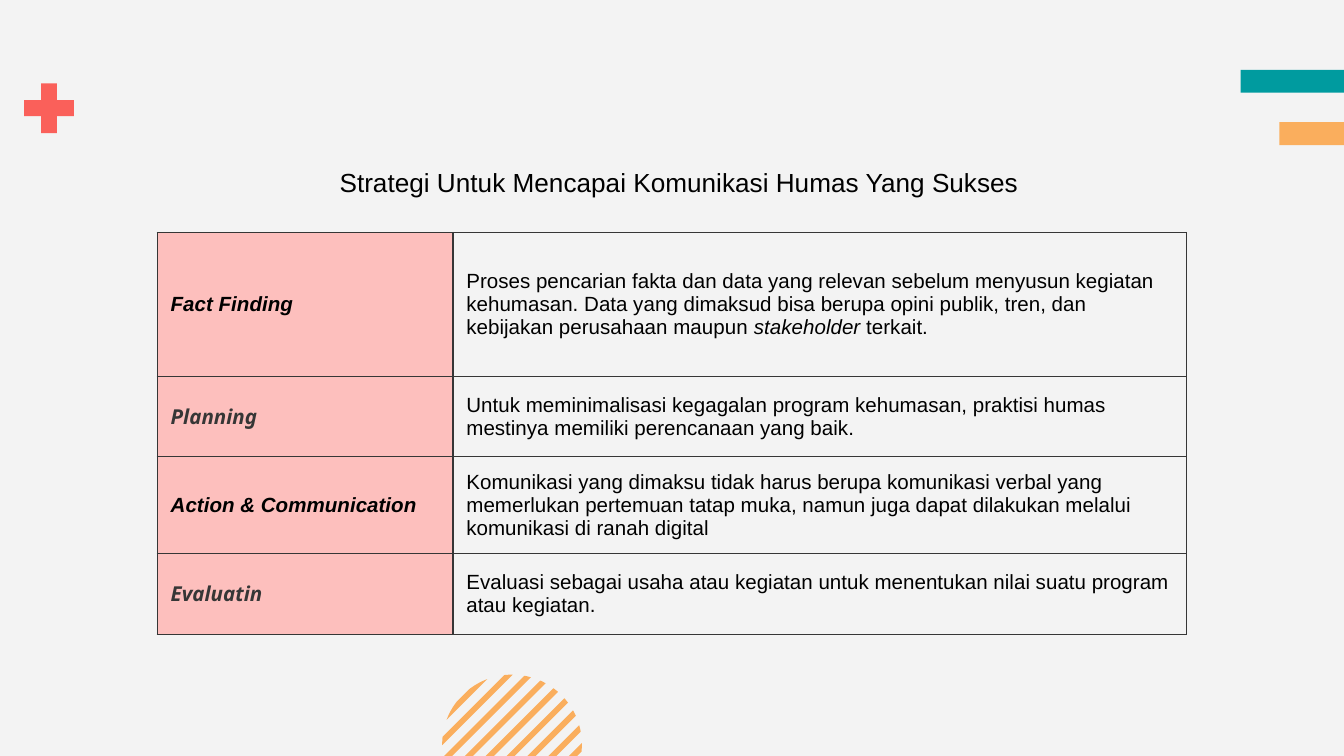
"""Build a slide with a four-step public relations strategy table."""
import math

from lxml import etree
from pptx import Presentation
from pptx import util as u
from pptx.dml.color import RGBColor
from pptx.enum import shapes, text
from pptx.oxml import ns

BACKGROUND = RGBColor(0xF3, 0xF3, 0xF3)
TEAL = RGBColor(0x00, 0x9B, 0x9F)
ORANGE = RGBColor(0xFA, 0xAE, 0x5D)
CORAL = RGBColor(0xFA, 0x60, 0x5A)
PINK = RGBColor(0xFD, 0xBF, 0xBD)
DARK = RGBColor(0x36, 0x36, 0x36)
BLACK = RGBColor(0x00, 0x00, 0x00)

COLUMN_WIDTHS = (2.2, 5.46)
ARIAL_LABEL = {"font": "Arial", "color": BLACK}
NOTO_LABEL = {"font": "Noto Sans", "color": DARK}
STRATEGY = [
    (1.07, "Fact Finding", ARIAL_LABEL, [
        ("Proses pencarian fakta dan data yang relevan sebelum menyusun kegiatan "
         "kehumasan. Data yang dimaksud bisa berupa opini publik, tren, dan "
         "kebijakan perusahaan maupun ", False),
        ("stakeholder ", True),
        ("terkait.", False)]),
    (0.6, "Planning", NOTO_LABEL, [
        ("Untuk meminimalisasi kegagalan program kehumasan, praktisi humas "
         "mestinya memiliki perencanaan yang baik.", False)]),
    (0.72, "Action & Communication", ARIAL_LABEL, [
        ("Komunikasi yang dimaksu tidak harus berupa komunikasi verbal yang "
         "memerlukan pertemuan tatap muka, namun juga dapat dilakukan melalui "
         "komunikasi di ranah digital", False)]),
    (0.6, "Evaluatin", NOTO_LABEL, [
        ("Evaluasi sebagai usaha atau kegiatan untuk menentukan nilai suatu "
         "program atau kegiatan.", False)]),
]


def add_run(paragraph, content, size=11, font="Arial", color=BLACK, bold=False, italic=False):
    run = paragraph.add_run()
    run.text = content
    run.font.size = u.Pt(size)
    run.font.name = font
    run.font.color.rgb = color
    run.font.bold = bold
    run.font.italic = italic


class SlideBuilder:
    def __init__(self, slide, border_color=DARK, border_width=0.75):
        self.slide = slide
        self.border_color = border_color
        self.border_width = border_width
        slide.background.fill.solid()
        slide.background.fill.fore_color.rgb = BACKGROUND

    def paint(self, shape, color):
        shape.shadow.inherit = False
        shape.fill.solid()
        shape.fill.fore_color.rgb = color
        shape.line.fill.background()

    def preset(self, kind, left, top, width, height, color):
        shape = self.slide.shapes.add_shape(
            kind, *map(u.Inches, (left, top, width, height)))
        self.paint(shape, color)
        return shape

    def striped_circle(self, center_x, center_y, radius, first, last, count, thickness, color):
        steps = 12
        for index in range(count):
            middle = first + (last - first) * index / (count - 1)
            near, far = (
                math.acos(max(-1, (middle + side * thickness / 2) / math.sqrt(2) / radius))
                for side in (1, -1))
            arc = [near + (far - near) * step / steps for step in range(steps + 1)]
            angles = arc + [-angle for angle in reversed(arc)]
            points = [(u.Inches(center_x + radius * math.cos(math.pi / 4 + angle)),
                       u.Inches(center_y + radius * math.sin(math.pi / 4 + angle)))
                      for angle in angles]
            builder = self.slide.shapes.build_freeform(*points[0])
            builder.add_line_segments(points[1:], close=True)
            self.paint(builder.convert_to_shape(), color)

    def title(self, content, left, top, width, height):
        shape = self.slide.shapes.add_textbox(
            *map(u.Inches, (left, top, width, height)))
        frame = shape.text_frame
        frame.word_wrap = True
        frame.margin_left = frame.margin_top = frame.margin_bottom = u.Inches(0.1)
        frame.margin_right = 0
        paragraph = frame.paragraphs[0]
        paragraph.alignment = text.PP_ALIGN.CENTER
        add_run(paragraph, content, size=14)

    def format_cell(self, cell, color=None):
        cell.vertical_anchor = text.MSO_ANCHOR.MIDDLE
        cell.margin_left = cell.margin_right = u.Inches(0.1)
        cell.margin_top = cell.margin_bottom = 0
        properties = cell._tc.get_or_add_tcPr()
        for side in ("lnL", "lnR", "lnT", "lnB"):
            line = etree.SubElement(properties, ns.qn(f"a:{side}"),
                                    w=str(u.Pt(self.border_width)))
            fill = etree.SubElement(line, ns.qn("a:solidFill"))
            etree.SubElement(fill, ns.qn("a:srgbClr"), val=str(self.border_color))
        if color is None:
            cell.fill.background()
        else:
            cell.fill.solid()
            cell.fill.fore_color.rgb = color

    def strategy_table(self, rows, left, top):
        height = sum(row[0] for row in rows)
        table = self.slide.shapes.add_table(
            len(rows), len(COLUMN_WIDTHS),
            *map(u.Inches, (left, top, sum(COLUMN_WIDTHS), height))).table
        table.first_row = table.horz_banding = False
        for column, width in zip(table.columns, COLUMN_WIDTHS):
            column.width = u.Inches(width)
        for index, (row_height, label, label_style, description) in enumerate(rows):
            table.rows[index].height = u.Inches(row_height)
            label_cell, description_cell = table.rows[index].cells
            self.format_cell(label_cell, PINK)
            add_run(label_cell.text_frame.paragraphs[0], label,
                    bold=True, italic=True, **label_style)
            self.format_cell(description_cell)
            paragraph = description_cell.text_frame.paragraphs[0]
            paragraph.space_after = u.Pt(16)
            for content, italic in description:
                add_run(paragraph, content, italic=italic)


def main():
    presentation = Presentation()
    presentation.slide_width = u.Inches(10)
    presentation.slide_height = u.Inches(10 * 9 / 16)
    slide = presentation.slides.add_slide(presentation.slide_layouts[6])
    builder = SlideBuilder(slide)

    kinds = shapes.MSO_SHAPE
    builder.preset(kinds.RECTANGLE, 9.23, 0.52, 0.79, 0.17, TEAL)
    builder.preset(kinds.RECTANGLE, 9.52, 0.91, 0.5, 0.17, ORANGE)
    plus = builder.preset(kinds.CROSS, 0.18, 0.62, 0.37, 0.37, CORAL)
    plus.adjustments[0] = 0.34
    builder.striped_circle(3.81, 5.54, 0.52, first=0.54, last=-0.7, count=9,
                           thickness=0.06, color=ORANGE)
    builder.strategy_table(STRATEGY, 1.17, 1.73)
    builder.title("Strategi Untuk Mencapai Komunikasi Humas Yang Sukses",
                  0.79, 1.14, 8.43, 0.4)
    presentation.save("out.pptx")


if __name__ == "__main__":
    main()
